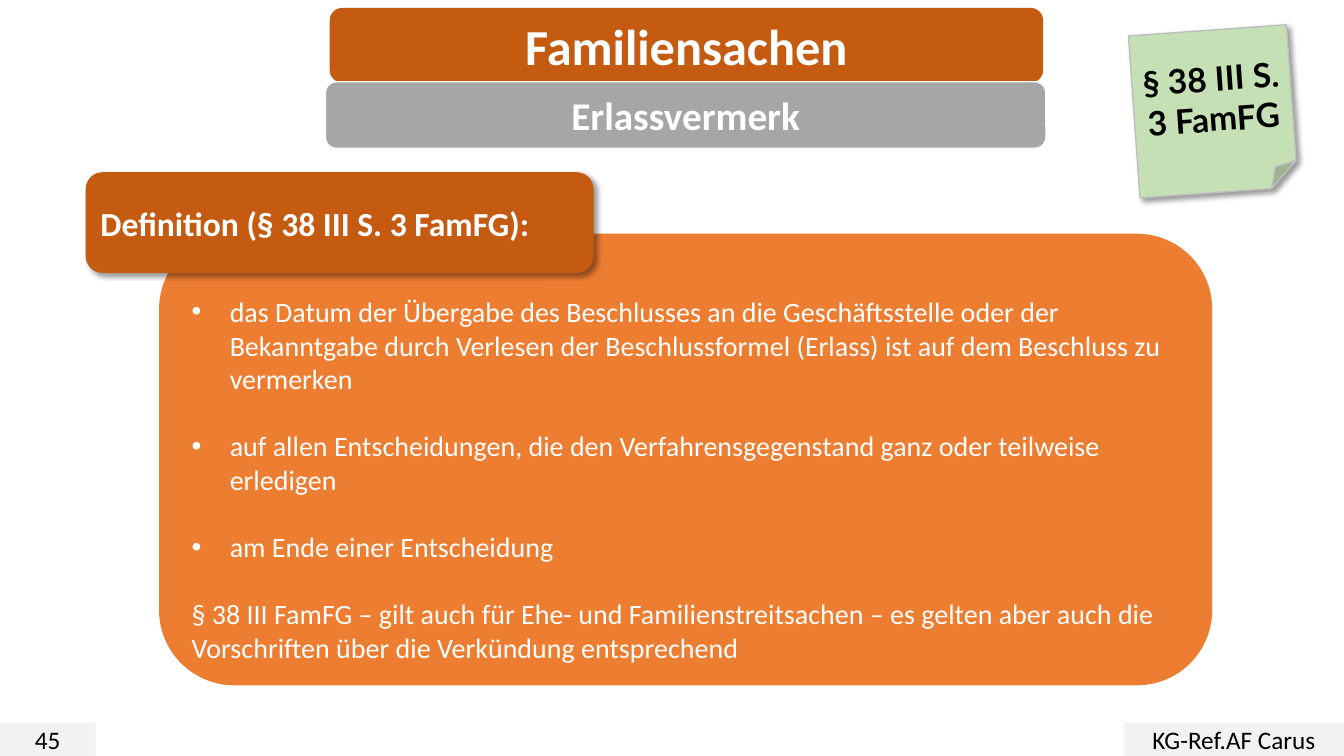
from dataclasses import dataclass

from lxml import etree
from pptx import Presentation
from pptx import util as u
from pptx.dml.color import RGBColor
from pptx.enum import shapes, text
from pptx.oxml import ns

DARK_ORANGE, ORANGE, GREY, PALE = "C55A11", "ED7D31", "A6A6A6", "F2F2F2"
GREEN, SILVER, WHITE, BLACK = "C5E0B4", "BFBFBF", "FFFFFF", "000000"
ROUND = shapes.MSO_SHAPE.ROUNDED_RECTANGLE
PLAIN = shapes.MSO_SHAPE.RECTANGLE
NOTE = shapes.MSO_SHAPE.FOLDED_CORNER
LEFT, CENTER = text.PP_ALIGN.LEFT, text.PP_ALIGN.CENTER
HANGING = u.Cm(0.96)


@dataclass
class Card:
    """A filled shape; the box is left, top, width, height in cm."""
    box: tuple[float, float, float, float]
    fill: str
    words: str = ""
    size: float = 18
    color: str = WHITE
    bold: bool = True
    kind: int = ROUND
    font: str = "Calibri"
    align: int = CENTER
    line: str = ""
    shadow: bool = False
    rotation: float = 0
    inset: float = 0.25


@dataclass
class Item:
    words: str
    bullet: bool = True


CARDS = [
    # Header backgrounds and footer
    Card((8.31, 0.2, 17.98, 1.88), DARK_ORANGE),
    Card((0, 18.21, 2.41, 0.84), PALE, "45", color=BLACK, bold=False, kind=PLAIN),
    Card((28.32, 18.21, 5.55, 0.84), PALE, "KG-Ref.AF Carus", color=BLACK,
         bold=False, kind=PLAIN),
    Card((8.2, 2.06, 18.16, 1.68), GREY, "Erlassvermerk", 28, line=WHITE),
    # Sticky note
    Card((28.58, 0.76, 3.99, 4.09), GREEN, "§ 38 III S. 3 FamFG", 24, BLACK,
         kind=NOTE, font="Lato", line=SILVER, shadow=True, rotation=355.9,
         inset=0.13),
    # Definition panel and its tab
    Card((4.01, 5.89, 26.54, 11.38), ORANGE),
    Card((2.16, 4.34, 12.8, 2.54), DARK_ORANGE,
         "Definition (§ 38 III S. 3 FamFG):", 24, align=LEFT, shadow=True),
]

ITEMS = [
    Item("das Datum der Übergabe des Beschlusses an die Geschäftsstelle oder der "
         "Bekanntgabe durch Verlesen der Beschlussformel (Erlass) ist auf dem "
         "Beschluss zu vermerken"),
    Item("auf allen Entscheidungen, die den Verfahrensgegenstand ganz oder "
         "teilweise erledigen"),
    Item("am Ende einer Entscheidung"),
    Item("§ 38 III FamFG – gilt auch für Ehe- und Familienstreitsachen – es "
         "gelten aber auch die Vorschriften über die Verkündung entsprechend",
         bullet=False),
]


def paint(target, color: str) -> None:
    """Give a fill or line format a solid colour."""
    fill = getattr(target, "fill", target)
    fill.solid()
    fill.fore_color.rgb = RGBColor.from_string(color)


def add_span(para, words: str, size: float, color: str, bold: bool,
             font: str = "Calibri") -> None:
    span = para.add_run()
    span.text = words
    span.font.size, span.font.bold, span.font.name = u.Pt(size), bold, font
    span.font.color.rgb = RGBColor.from_string(color)


def set_frame(frame, anchor: int, inset: float, vertical: float = 0) -> None:
    frame.word_wrap = True
    frame.auto_size = text.MSO_AUTO_SIZE.NONE
    frame.vertical_anchor = anchor
    frame.margin_left = frame.margin_right = u.Cm(inset)
    frame.margin_top = frame.margin_bottom = u.Cm(vertical)


def add_shadow(shape) -> None:
    effects = shape.element.spPr.find(ns.qn("a:effectLst"))
    outer = etree.SubElement(effects, ns.qn("a:outerShdw"), blurRad=str(u.Pt(4)),
                             dist=str(u.Pt(3)), dir="2700000", algn="tl",
                             rotWithShape="0")
    tone = etree.SubElement(outer, ns.qn("a:srgbClr"), val=BLACK)
    etree.SubElement(tone, ns.qn("a:alpha"), val="40000")


def draw_card(page, card: Card) -> None:
    shape = page.shapes.add_shape(card.kind, *map(u.Cm, card.box))
    shape.rotation = card.rotation
    shape.shadow.inherit = False
    if card.shadow:
        add_shadow(shape)
    paint(shape.fill, card.fill)
    if card.line:
        paint(shape.line, card.line)
        shape.line.width = u.Pt(1)
    else:
        shape.line.fill.background()
    if card.words:
        set_frame(shape.text_frame, text.MSO_ANCHOR.MIDDLE, card.inset, 0.13)
        para = shape.text_frame.paragraphs[0]
        para.alignment = card.align
        add_span(para, card.words, card.size, card.color, card.bold, card.font)


def place(holder, box: tuple[float, float, float, float]) -> None:
    """Move a placeholder to its box, in front of the cards."""
    holder.left, holder.top, holder.width, holder.height = map(u.Cm, box)
    holder.element.getparent().append(holder.element)


def fill_title(holder, words: str) -> None:
    place(holder, CARDS[0].box)
    set_frame(holder.text_frame, text.MSO_ANCHOR.MIDDLE, 0.25)
    para = holder.text_frame.paragraphs[0]
    para.alignment = CENTER
    add_span(para, words, 36, WHITE, True)


def fill_list(holder, items: list[Item]) -> None:
    place(holder, (4.83, 7.42, 24.92, 9.5))
    frame = holder.text_frame
    set_frame(frame, text.MSO_ANCHOR.TOP, 0)
    for index, item in enumerate(items):
        para = frame.add_paragraph() if index else frame.paragraphs[0]
        para.alignment = LEFT
        para.space_before = u.Pt(24 if index else 0)
        para.space_after = u.Pt(0)
        props = para._p.get_or_add_pPr()
        indent = HANGING if item.bullet else 0
        props.set("marL", str(indent))
        props.set("indent", str(-indent))
        if item.bullet:
            etree.SubElement(props, ns.qn("a:buFont"), typeface="Arial")
            etree.SubElement(props, ns.qn("a:buChar"), char="•")
        else:
            etree.SubElement(props, ns.qn("a:buNone"))
        add_span(para, item.words, 20, WHITE, False)


def main() -> None:
    deck = Presentation()
    deck.slide_width, deck.slide_height = u.Cm(33.87), u.Cm(19.05)
    page = deck.slides.add_slide(deck.slide_layouts[1])
    for card in CARDS:
        draw_card(page, card)
    fill_title(page.shapes.title, "Familiensachen")
    fill_list(page.placeholders[1], ITEMS)
    deck.save("out.pptx")


if __name__ == "__main__":
    main()
